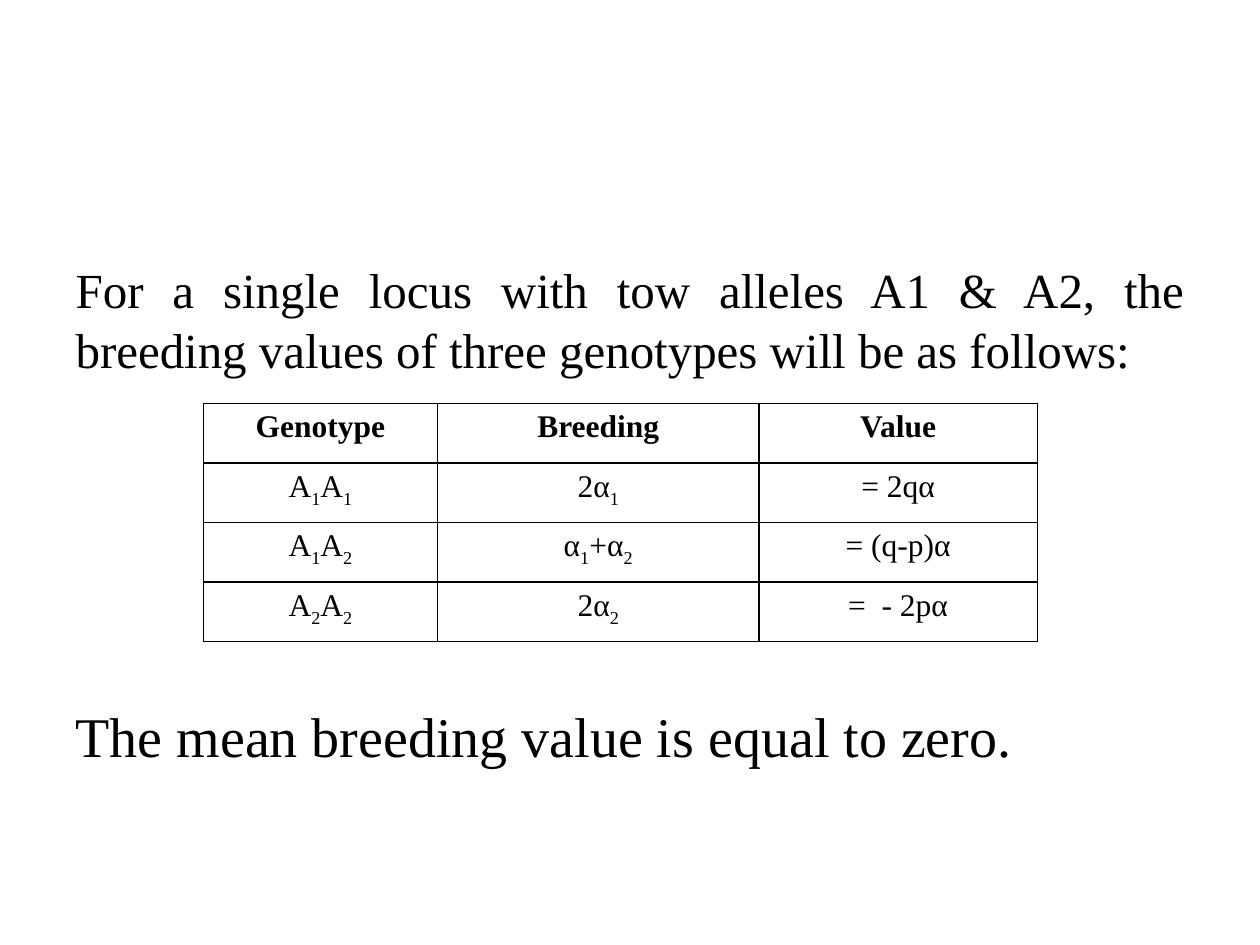
from dataclasses import dataclass

from lxml.etree import SubElement as Sub
from pptx import Presentation as Deck
from pptx.dml.color import RGBColor as Rgb
from pptx.enum.text import MSO_ANCHOR as Anchor
from pptx.enum.text import MSO_AUTO_SIZE as Fit
from pptx.enum.text import PP_ALIGN as Align
from pptx.oxml.ns import qn
from pptx.util import Cm, Pt


@dataclass(frozen=True)
class Theme:
    face: str = "Times New Roman"
    ink: Rgb = Rgb(0, 0, 0)
    paper: Rgb = Rgb(255, 255, 255)
    lead: int = 28
    close: int = 32
    cell: int = 18
    rule: int = 1


def put(item, form):
    for name, value in form.items():
        setattr(item, name, value)


def split(text):
    """Yield (part, lowered) pairs; "_" lowers the one character after it."""
    first, *rest = text.split("_")
    yield first, False
    for part in rest:
        yield part[0], True
        if part[1:]:
            yield part[1:], False


class Page:
    """Holds the theme and the current slide."""

    def __init__(self, deck, theme):
        self.theme = theme
        self.slide = deck.slides.add_slide(deck.slide_layouts[1])
        title = self.slide.shapes.title.element
        title.getparent().remove(title)
        fill = self.slide.background.fill
        fill.solid()
        fill.fore_color.rgb = theme.paper

    def style(self, font, size, bold=False):
        put(font, {"name": self.theme.face, "size": Pt(size), "bold": bold})
        font.color.rgb = self.theme.ink

    def body(self, box, lines):
        """Fill the body with (text, size, line height, space before) rows."""
        shape = self.slide.placeholders[1]
        put(shape, dict(zip(("left", "top", "width", "height"), map(Cm, box))))
        frame = shape.text_frame
        put(frame, {"word_wrap": True, "auto_size": Fit.NONE,
                    "vertical_anchor": Anchor.TOP})
        for i, (text, size, high, gap) in enumerate(lines):
            para = frame.paragraphs[0] if i == 0 else frame.add_paragraph()
            put(para, {"alignment": Align.JUSTIFY, "line_spacing": Pt(high),
                       "space_before": Pt(gap)})
            props = para._p.get_or_add_pPr()
            props.set("marL", "0")
            props.set("indent", "0")
            Sub(props, qn("a:buNone"))
            run = para.add_run()
            run.text = text
            self.style(run.font, size)

    def frame(self, cell):
        """Rule all four sides of a cell."""
        props = cell._tc.get_or_add_tcPr()
        for i, side in enumerate(("lnL", "lnR", "lnT", "lnB")):
            line = props.makeelement(qn(f"a:{side}"),
                                     {"w": str(Pt(self.theme.rule))})
            fill = Sub(line, qn("a:solidFill"))
            Sub(fill, qn("a:srgbClr"), val=str(self.theme.ink))
            props.insert(i, line)

    def cell(self, cell, text, bold):
        cell.fill.solid()
        cell.fill.fore_color.rgb = self.theme.paper
        self.frame(cell)
        para = cell.text_frame.paragraphs[0]
        para.alignment = Align.CENTER
        for part, low in split(text):
            run = para.add_run()
            run.text = part
            self.style(run.font, self.theme.cell, bold)
            if low:
                run._r.get_or_add_rPr().set("baseline", "-25000")

    def table(self, left, top, widths, high, rows):
        table = self.slide.shapes.add_table(
            len(rows), len(widths), Cm(left), Cm(top),
            Cm(sum(widths)), Cm(high * len(rows))).table
        put(table, {"first_row": True, "horz_banding": False})
        for col, width in zip(table.columns, widths):
            col.width = Cm(width)
        for r, row in enumerate(rows):
            table.rows[r].height = Cm(high)
            for c, text in enumerate(row):
                self.cell(table.cell(r, c), text, bold=r == 0)


def main():
    deck = Deck()
    put(deck, {"slide_width": Cm(25.4), "slide_height": Cm(19.05)})
    theme = Theme()
    page = Page(deck, theme)
    page.body((1.27, 5.1, 22.86, 13.37), [
        ("For a single locus with tow alleles A1 & A2, the breeding values "
         "of three genotypes will be as follows:", theme.lead, 34, 0),
        ("The mean breeding value is equal to zero.", theme.close, 38, 185),
    ])
    page.table(4.1, 8.13, (4.72, 6.48, 5.61), 1.2, [
        ("Genotype", "Breeding", "Value"),
        ("A_1A_1", "2α_1", "= 2qα"),
        ("A_1A_2", "α_1+α_2", "= (q-p)α"),
        ("A_2A_2", "2α_2", "=  - 2pα"),
    ])
    deck.save("out.pptx")


if __name__ == "__main__":
    main()
